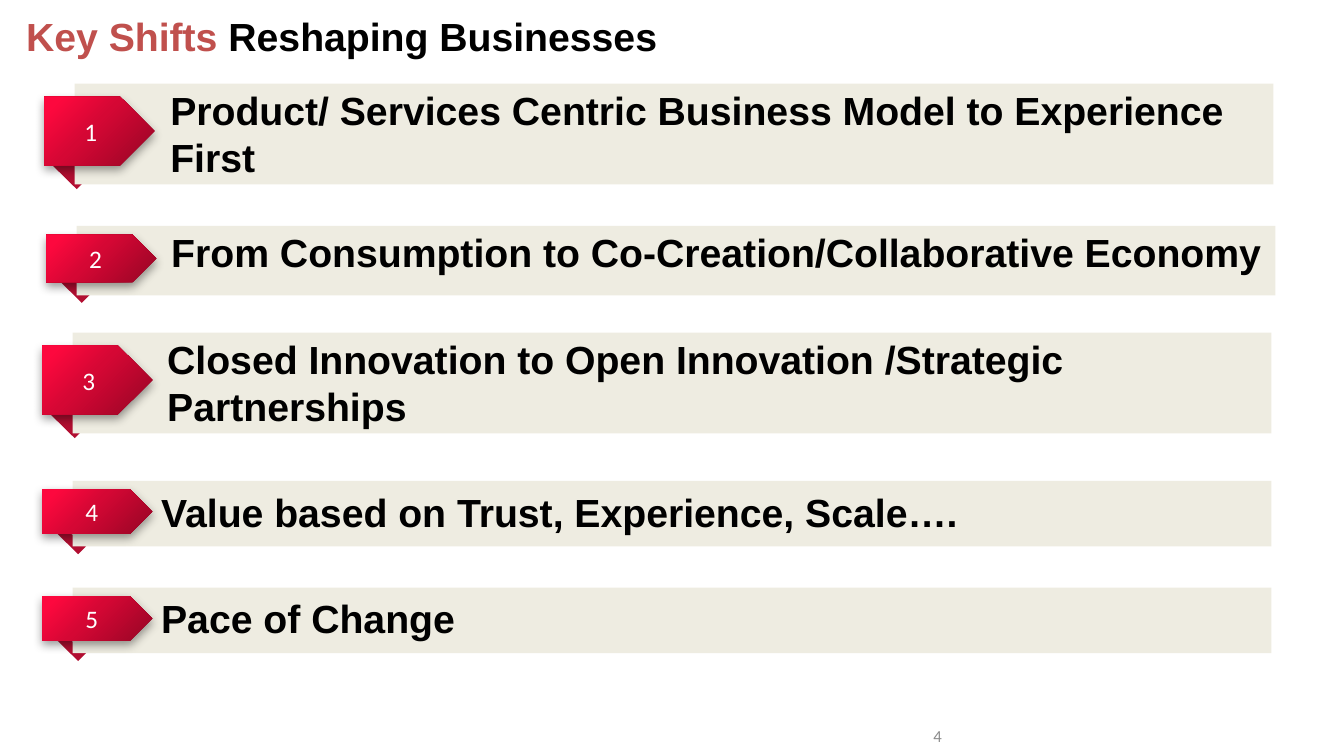
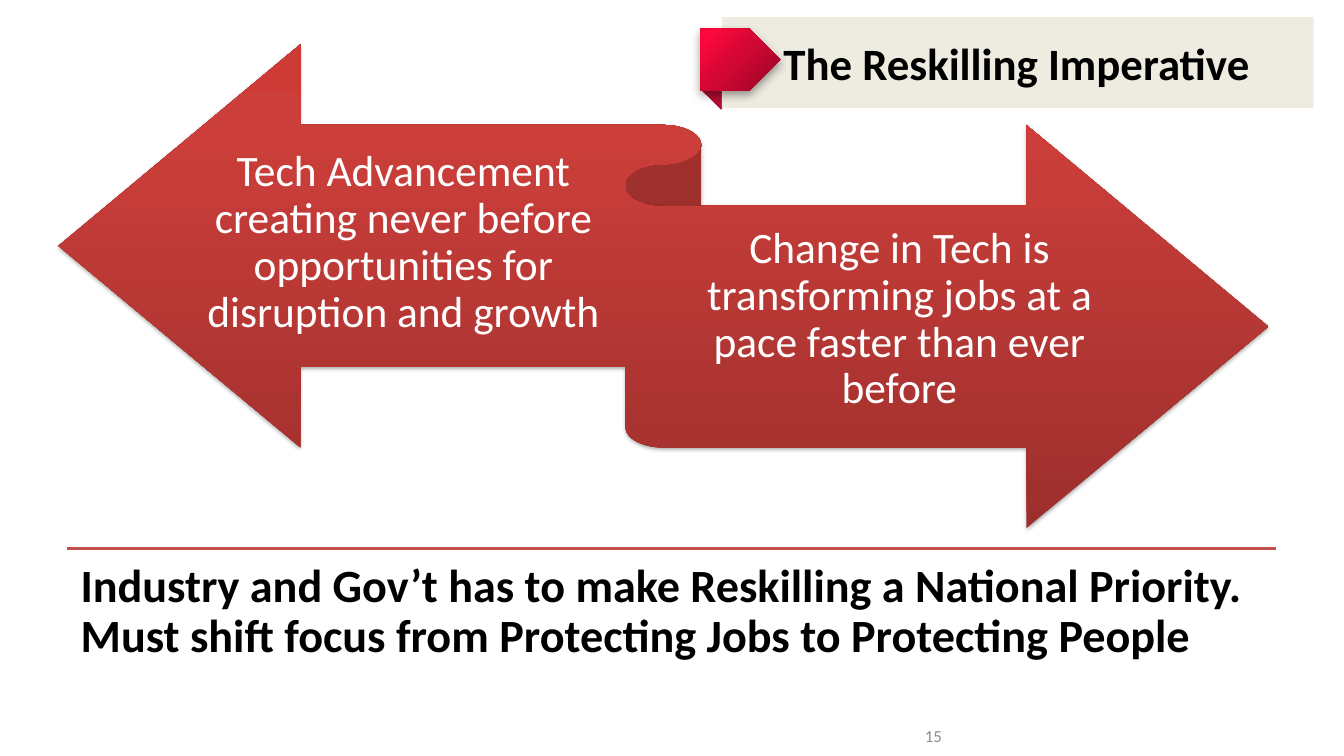
from lxml import etree
from pptx import Presentation
from pptx.dml.color import RGBColor
from pptx.enum.shapes import MSO_CONNECTOR, MSO_SHAPE
from pptx.enum.text import MSO_ANCHOR, PP_ALIGN
from pptx.oxml.ns import qn
from pptx.util import Emu, Pt

PX = 9144  # EMU in one px, 100 px to the inch
BLACK, WHITE, GREY = "000000", "FFFFFF", "8C8C8C"
ACCENT, BEIGE, FOLD = "C0504D", "EEECE1", "B20E31"
TAG_STOPS = [(0, "960525"), (56, "D50734"), (90, "FD083E")]
ARROW_STOPS = [(0, "9C2F2D"), (80, "CB3E3A"), (100, "CE3B37")]
INSETS = (10, 5, 10, 5)

# band left, band top, band height, text left, text top, text
SHIFTS = [
    (74, 83, 100, 159, 81, "Product/ Services Centric Business Model to Experience First"),
    (76, 224, 69, 160, 222, "From Consumption to Co-Creation/Collaborative Economy"),
    (72, 330, 100, 156, 328, "Closed Innovation to Open Innovation /Strategic Partnerships"),
    (72, 477, 65, 150, 479, "Value based on Trust, Experience, Scale…."),
    (72, 583, 65, 150, 585, "Pace of Change"),
]


def px(*lengths):
    return [Emu(round(length * PX)) for length in lengths]


def rgb(color):
    return RGBColor.from_string(color)


def add_node(parent, tag, **attrs):
    return etree.SubElement(parent, qn(tag), {k: str(v) for k, v in attrs.items()})


def add_color(parent, color, alpha=None):
    node = add_node(parent, "a:srgbClr", val=color)
    if alpha:
        add_node(node, "a:alpha", val=alpha * 1000)


def set_gradient(sp, stops, angle):
    """Fill with (percent, colour) stops along a clockwise angle."""
    sp.fill.gradient()
    grad = sp._element.spPr.find(qn("a:gradFill"))
    for child in list(grad):
        grad.remove(child)
    gs_list = add_node(grad, "a:gsLst")
    for percent, color in stops:
        add_color(add_node(gs_list, "a:gs", pos=percent * 1000), color)
    add_node(grad, "a:lin", ang=angle * 60000, scaled=0)


def set_shadow(sp, alpha, blur, distance):
    """Cast a black shadow straight down; blur and distance in points."""
    sp.shadow.inherit = False
    effects = sp._element.spPr.find(qn("a:effectLst"))
    shadow = add_node(effects, "a:outerShdw", blurRad=Pt(blur), dist=Pt(distance),
                      dir=90 * 60000, algn="t", rotWithShape=0)
    add_color(shadow, BLACK, alpha)


def add_shape(slide, kind, box, fill=None):
    sp = slide.shapes.add_shape(kind, *px(*box))
    sp.shadow.inherit = False
    sp.line.fill.background()
    if fill:
        sp.fill.solid()
        sp.fill.fore_color.rgb = rgb(fill)
    return sp


def set_text(sp, runs, size, font="Calibri", bold=False, align=PP_ALIGN.LEFT,
             anchor=MSO_ANCHOR.TOP, insets=INSETS, spacing=None):
    """Write one paragraph of (text, colour) runs."""
    tf = sp.text_frame
    tf.word_wrap = True
    tf.vertical_anchor = anchor
    tf.margin_left, tf.margin_top, tf.margin_right, tf.margin_bottom = px(*insets)
    p = tf.paragraphs[0]
    p.alignment = align
    if spacing:
        p.line_spacing = spacing
    for text, color in runs:
        r = p.add_run()
        r.text = text
        r.font.name = font
        r.font.size = Pt(size)
        r.font.bold = bold
        r.font.color.rgb = rgb(color)


def add_text(slide, box, runs, size, **style):
    set_text(slide.shapes.add_textbox(*px(*box)), runs, size, **style)


def add_page_number(slide, number):
    add_text(slide, (633, 710, 311, 40), [(number, GREY)], 12,
             align=PP_ALIGN.RIGHT, anchor=MSO_ANCHOR.MIDDLE)


def add_tagged_band(slide, x, y, w, h, tag_w=109, overhang=30, fold_h=39):
    """Beige band with a red tag folded round its left end; returns band and tag."""
    fold_w = 0.28 * h
    fold_box = (x - 2 - fold_w / 2, y + 0.81 * h - fold_h / 2, fold_w, fold_h)
    fold = add_shape(slide, MSO_SHAPE.RIGHT_TRIANGLE, fold_box, FOLD)
    fold.rotation = 314.5
    band = add_shape(slide, MSO_SHAPE.RECTANGLE, (x, y, w, h), BEIGE)
    tag = add_shape(slide, MSO_SHAPE.PENTAGON,
                    (x - overhang, y + 0.13 * h, tag_w, 0.68 * h))
    set_gradient(tag, TAG_STOPS, 225)
    set_shadow(tag, 40, 7, 3)
    return band, tag


def add_rule(slide, x, y, w):
    line = slide.shapes.add_connector(MSO_CONNECTOR.STRAIGHT, *px(x, y, x + w, y))
    line.line.color.rgb = rgb(ACCENT)
    line.line.width = Pt(2)
    add_node(line._element.spPr, "a:effectLst")


def build_key_shifts(slide):
    add_page_number(slide, "4")
    add_text(slide, (16, 7, 1158, 57),
             [("Key Shifts ", ACCENT), ("Reshaping Businesses", BLACK)], 28,
             font="Arial", bold=True)
    for number, (x, y, h, text_x, text_y, text) in enumerate(SHIFTS, 1):
        _, tag = add_tagged_band(slide, x, y, 1189, h)
        set_text(tag, [(str(number), WHITE)], 18, align=PP_ALIGN.CENTER,
                 anchor=MSO_ANCHOR.MIDDLE)
        add_text(slide, (text_x, text_y, 1138, h), [(text, BLACK)], 28,
                 font="Arial", bold=True)


def build_reskilling(slide):
    add_page_number(slide, "15")
    arrows = add_shape(slide, MSO_SHAPE.LEFT_RIGHT_RIBBON, (58, 44, 1200, 480))
    set_gradient(arrows, ARROW_STOPS, 270)
    set_shadow(arrows, 35, 3.1, 1.8)
    for box, text in [
        ((202, 124, 396, 235),
         "Tech Advancement creating never before opportunities for disruption and growth"),
        ((658, 200, 468, 235),
         "Change in Tech is transforming jobs at a pace faster than ever before"),
    ]:
        add_text(slide, box, [(text, WHITE)], 31, align=PP_ALIGN.CENTER,
                 anchor=MSO_ANCHOR.MIDDLE, insets=(0, 12, 0, 13), spacing=0.9)
    add_rule(slide, 66, 544, 1200)
    add_text(slide, (66, 544, 1200, 148),
             [("Industry and Gov’t has to make Reskilling a National Priority. "
               "Must shift focus from Protecting Jobs to Protecting People", BLACK)],
             33, bold=True, insets=(14, 14, 14, 14), spacing=0.9)
    band, _ = add_tagged_band(slide, 716, 17, 587, 90, tag_w=79, overhang=21, fold_h=28)
    set_text(band, [("The Reskilling Imperative", BLACK)], 32, bold=True,
             anchor=MSO_ANCHOR.MIDDLE, insets=(61, 5, 10, 5))


def main():
    prs = Presentation()
    prs.slide_width, prs.slide_height = px(1333, 750)
    for build in (build_key_shifts, build_reskilling):
        build(prs.slides.add_slide(prs.slide_layouts[6]))
    prs.save("out.pptx")


if __name__ == "__main__":
    main()
